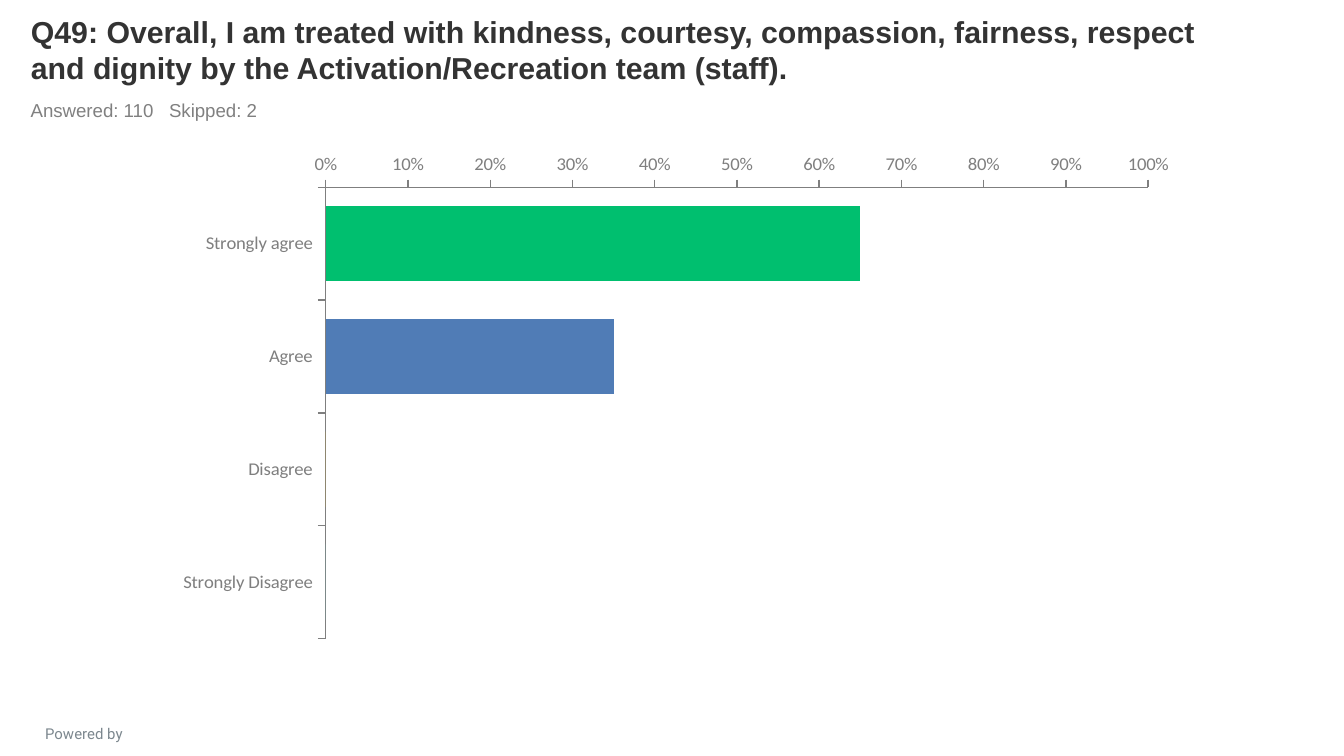
"""Build a survey slide with a bar chart of the answers to question 49."""
from lxml import etree
from pptx import Presentation
from pptx.chart.data import CategoryChartData as ChartData
from pptx.dml.color import RGBColor as RGB
from pptx.enum.chart import XL_CHART_TYPE as Kind
from pptx.enum.chart import XL_TICK_LABEL_POSITION as Place, XL_TICK_MARK as Tick
from pptx.enum.text import MSO_ANCHOR as Anchor, MSO_AUTO_SIZE as Auto, PP_ALIGN as Align
from pptx.oxml import parse_xml
from pptx.oxml.ns import qn
from pptx.util import Inches, Pt

COLORS = {"title": "333333", "note": "808080", "foot": "7C878E", "axis": "7F7F7F"}
BARS = {
    "Strongly agree": (0.65, "00BF6F"),
    "Agree": (0.35, "507CB6"),
    "Disagree": (0, "F9BE00"),
    "Strongly Disagree": (0, "6BC8CD"),
}


def style(font, size, name, color, bold=False):
    font.size, font.name, font.bold = Pt(size), name, bold
    font.color.rgb = RGB.from_string(COLORS[color])


def label(box, text, size, name, color, align, bold=False):
    frame = box.text_frame
    frame.word_wrap, frame.auto_size = True, Auto.NONE
    frame.text = text
    line = frame.paragraphs[0]
    line.alignment = align
    for run in line.runs:
        style(run.font, size, name, color, bold)
    return line


deck = Presentation()
deck.slide_width, deck.slide_height = Inches(10), Inches(10 * 9 / 16)
slide = deck.slides.add_slide(deck.slide_layouts[5])

title = slide.shapes.title
title.left, title.top = Inches(0.13), Inches(0.09)
title.width, title.height = Inches(9), Inches(0.6)
label(title, "Q49: Overall, I am treated with kindness, courtesy, compassion, fairness, respect "
      "and dignity by the Activation/Recreation team (staff).",
      16.2, "Arial", "title", Align.LEFT, True)
title.text_frame.vertical_anchor = Anchor.BOTTOM

note = slide.shapes.add_textbox(Inches(0.13), Inches(0.69), Inches(9), Inches(0.26))
line = label(note, "Answered: 110\tSkipped: 2", 10, "Arial", "note", Align.LEFT)
tabs = etree.SubElement(line._p.get_or_add_pPr(), qn("a:tabLst"))
etree.SubElement(tabs, qn("a:tab"), pos=str(Inches(1.03)), algn="l")

foot = slide.shapes.add_textbox(Inches(0.05), Inches(5.34), Inches(1.15), Inches(0.18))
label(foot, "Powered by", 8, "Roboto", "foot", Align.CENTER)

data = ChartData(number_format="0%")
data.categories = list(BARS)
data.add_series("Series 1", [value for value, _ in BARS.values()])
chart = slide.shapes.add_chart(Kind.BAR_CLUSTERED, Inches(1.2), Inches(1.15),
                               Inches(7.65), Inches(3.9), data).chart
chart.has_legend = chart.has_title = False
style(chart.font, 18, "Calibri", "title")

plot = chart.plots[0]
plot.gap_width, plot.overlap, plot.vary_by_categories = 50, 100, False
series = plot.series[0]
series.format.fill.solid()
series.format.fill.fore_color.rgb = RGB.from_string("00BF6F")
for spot, (_, color) in enumerate(BARS.values()):
    fill = series.points[spot].format.fill
    fill.solid()
    fill.fore_color.rgb = RGB.from_string(color)

cats, vals = chart.category_axis, chart.value_axis
for axis in (cats, vals):
    axis.has_major_gridlines = False
    axis.major_tick_mark, axis.minor_tick_mark = Tick.OUTSIDE, Tick.NONE
    axis.format.line.width = Pt(0.75)
    axis.format.line.color.rgb = RGB.from_string(COLORS["axis"])
    style(axis.tick_labels.font, 10, "Calibri", "axis")
cats.reverse_order = True
cats.crosses_at = len(BARS) + 1
cats.tick_label_position = Place.LOW
vals.minimum_scale, vals.maximum_scale, vals.major_unit = 0, 1, 0.1
vals.tick_labels.number_format = "0%"
vals.tick_labels.number_format_is_linked = False

area = chart._chartSpace.chart.plotArea
for old in area.findall(qn("c:layout")):
    area.remove(old)
area.insert(0, parse_xml(
    '<c:layout xmlns:c="http://schemas.openxmlformats.org/drawingml/2006/chart"><c:manualLayout>'
    '<c:layoutTarget val="inner"/><c:xMode val="edge"/><c:yMode val="edge"/>'
    '<c:x val="0.16"/><c:y val="0.02"/><c:w val="0.8"/><c:h val="0.9"/>'
    '</c:manualLayout></c:layout>'))

deck.save("out.pptx")
